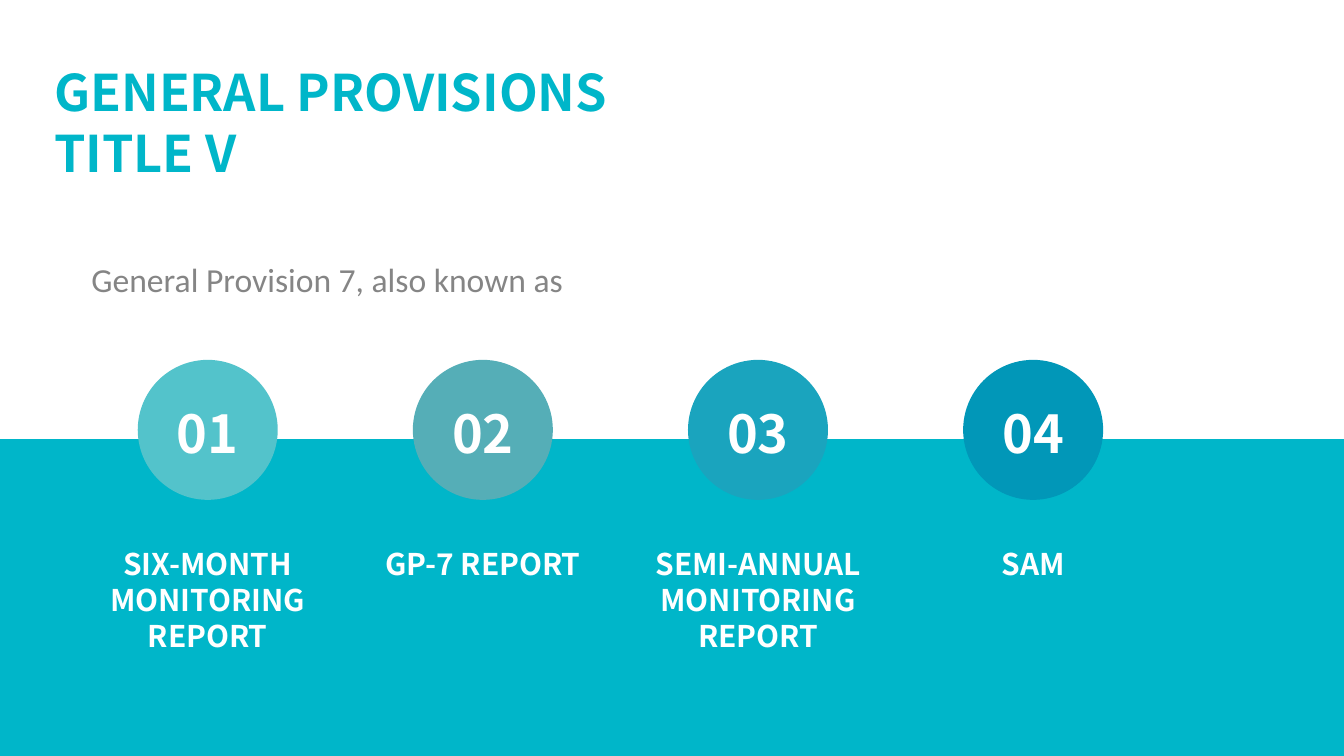
from pptx import Presentation
from pptx.dml.color import RGBColor
from pptx.enum.shapes import MSO_SHAPE
from pptx.enum.text import MSO_ANCHOR, MSO_AUTO_SIZE, PP_ALIGN
from pptx.util import Pt

TEAL = RGBColor(0x00, 0xB6, 0xC9)
GREY = RGBColor(0x85, 0x85, 0x85)
WHITE = RGBColor(0xFF, 0xFF, 0xFF)
HEADING_FONT = "Noto Sans CJK SC"
BODY_FONT = "Calibri"

SLIDE_WIDTH, SLIDE_HEIGHT = 720, 405
BAND_TOP = 235.3
FIRST_CENTER, COLUMN_PITCH = 111.3, 147.4
CIRCLE_TOP, CIRCLE_SIZE = 192.8, 75
LABEL_TOP, LABEL_WIDTH, LABEL_LINE = 290.9, 121.7, 19.2

REPORT_NAMES = [
    ("SIX-MONTH MONITORING REPORT", RGBColor(0x53, 0xC3, 0xCB), 3),
    ("GP-7 REPORT", RGBColor(0x55, 0xAE, 0xB7), 1),
    ("SEMI-ANNUAL MONITORING REPORT", RGBColor(0x1A, 0xA4, 0xBE), 3),
    ("SAM", RGBColor(0x01, 0x97, 0xB8), 1),
]


def write(frame, text, *, size, color, font=HEADING_FONT, bold=True,
          align=PP_ALIGN.LEFT, anchor=MSO_ANCHOR.TOP, line=None, top_inset=0):
    frame.word_wrap = True
    frame.auto_size = MSO_AUTO_SIZE.NONE
    frame.vertical_anchor = anchor
    frame.margin_left = frame.margin_right = frame.margin_bottom = 0
    frame.margin_top = Pt(top_inset)
    paragraph = frame.paragraphs[0]
    paragraph.text = text
    paragraph.alignment = align
    if line:
        paragraph.line_spacing = Pt(line)
    for run in paragraph.runs:
        run.font.name = font
        run.font.size = Pt(size)
        run.font.bold = bold
        run.font.color.rgb = color


class SlideBuilder:
    """Holds the presentation and the slide being filled."""

    def __init__(self):
        self.deck = Presentation()
        self.deck.slide_width = Pt(SLIDE_WIDTH)
        self.deck.slide_height = Pt(SLIDE_HEIGHT)
        self.slide = self.deck.slides.add_slide(self.deck.slide_layouts[5])

    def title(self, text, left, top, width, height, **style):
        title = self.slide.shapes.title
        title.left, title.top = Pt(left), Pt(top)
        title.width, title.height = Pt(width), Pt(height)
        write(title.text_frame, text, **style)

    def filled(self, preset, left, top, width, height, color):
        shape = self.slide.shapes.add_shape(
            preset, Pt(left), Pt(top), Pt(width), Pt(height))
        shape.shadow.inherit = False
        shape.fill.solid()
        shape.fill.fore_color.rgb = color
        shape.line.fill.background()
        return shape

    def text(self, text, left, top, width, height, **style):
        box = self.slide.shapes.add_textbox(
            Pt(left), Pt(top), Pt(width), Pt(height))
        write(box.text_frame, text, **style)

    def numbered_report(self, number, name, color, line_count):
        center = FIRST_CENTER + (number - 1) * COLUMN_PITCH
        circle = self.filled(MSO_SHAPE.OVAL, center - CIRCLE_SIZE / 2,
                             CIRCLE_TOP, CIRCLE_SIZE, CIRCLE_SIZE, color)
        write(circle.text_frame, f"{number:02}", size=28, color=WHITE,
              align=PP_ALIGN.CENTER, anchor=MSO_ANCHOR.MIDDLE,
              line=33.6, top_inset=3)
        self.text(name, center - LABEL_WIDTH / 2, LABEL_TOP, LABEL_WIDTH,
                  line_count * LABEL_LINE, size=16, color=WHITE,
                  align=PP_ALIGN.CENTER, line=LABEL_LINE, top_inset=1.5)


def main():
    builder = SlideBuilder()
    builder.filled(MSO_SHAPE.RECTANGLE, 0, BAND_TOP, SLIDE_WIDTH,
                   SLIDE_HEIGHT - BAND_TOP, TEAL)
    builder.title("GENERAL PROVISIONS \vTITLE V", 29, 31, 661.7, 32.4,
                  size=27, color=TEAL, line=32.6, top_inset=1.5)
    builder.text("General Provision 7, also known as", 49, 138.5, 661, 21.6,
                 size=18, color=GREY, font=BODY_FONT, bold=False)
    for number, (name, color, line_count) in enumerate(REPORT_NAMES, 1):
        builder.numbered_report(number, name, color, line_count)
    builder.deck.save("out.pptx")


if __name__ == "__main__":
    main()
